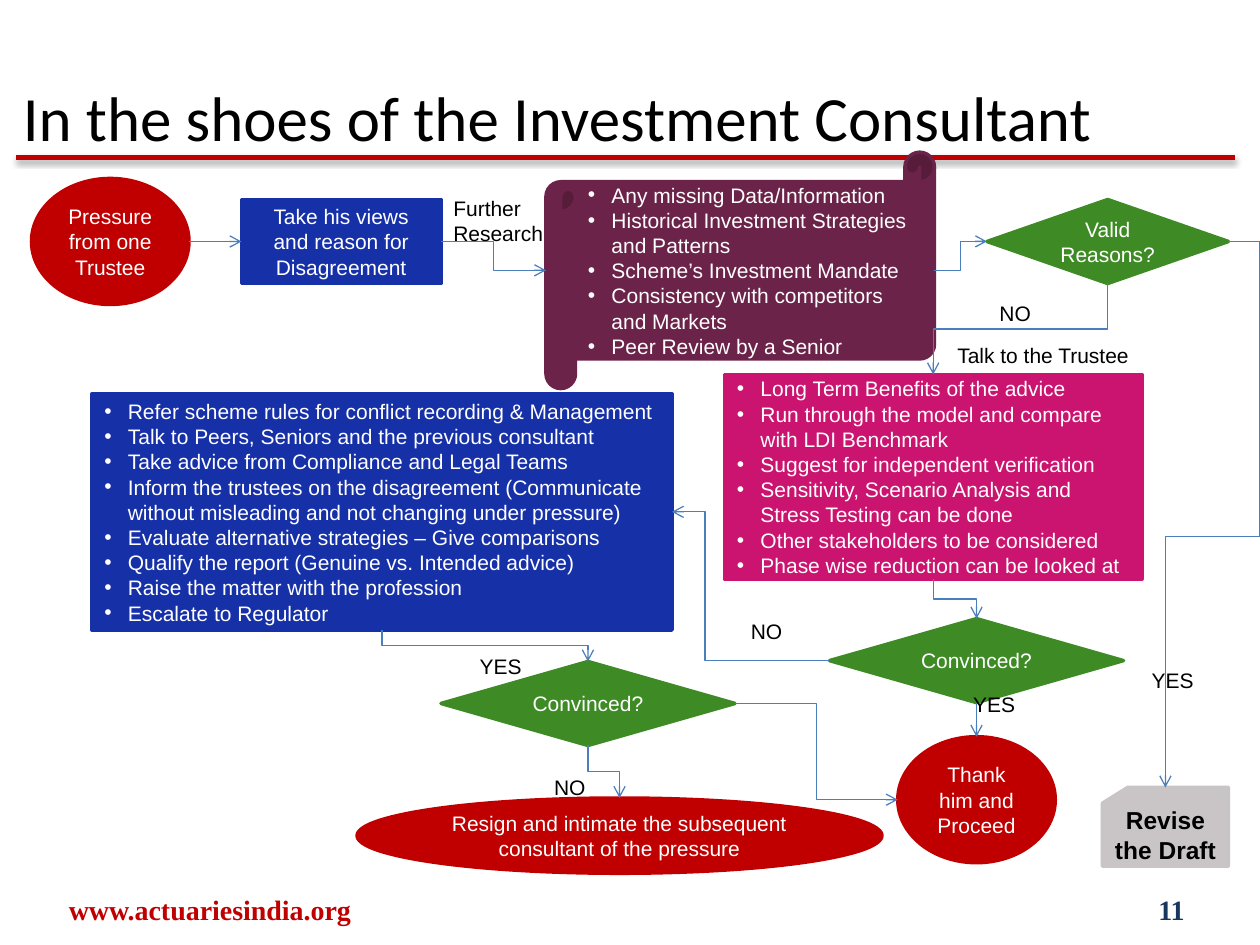
from lxml import etree
from pptx import Presentation
from pptx.dml.color import RGBColor
from pptx.enum.shapes import MSO_CONNECTOR, MSO_SHAPE
from pptx.enum.text import MSO_ANCHOR, MSO_AUTO_SIZE, PP_ALIGN
from pptx.oxml.ns import qn
from pptx.util import Pt

STRAIGHT, ELBOW = MSO_CONNECTOR.STRAIGHT, MSO_CONNECTOR.ELBOW
ELLIPSE, RECTANGLE = MSO_SHAPE.OVAL, MSO_SHAPE.RECTANGLE
SCROLL, CARD = MSO_SHAPE.HORIZONTAL_SCROLL, MSO_SHAPE.FLOWCHART_CARD
PROCESS, DECISION = MSO_SHAPE.FLOWCHART_PROCESS, MSO_SHAPE.FLOWCHART_DECISION
LEFT, CENTER, RIGHT = PP_ALIGN.LEFT, PP_ALIGN.CENTER, PP_ALIGN.RIGHT
MIDDLE, TOP = MSO_ANCHOR.MIDDLE, MSO_ANCHOR.TOP
GROW = MSO_AUTO_SIZE.SHAPE_TO_FIT_TEXT

RED, BLUE, GREEN = "C00000", "1630A7", "3E8B26"
PLUM, PINK, GREY = "6C2349", "CA1470", "C9C4C6"
BLACK, WHITE, NAVY, LINK = "000000", "FFFFFF", "17375E", "4B7EBC"

# Fraction of width and height at which each side's midpoint lies
SIDES = {"left": (0, 0.5), "right": (1, 0.5), "top": (0.5, 0), "bottom": (0.5, 1)}


def color(hex_code):
    return RGBColor.from_string(hex_code)


def side_point(node, side):
    across, down = SIDES[side]
    return (node.left.pt + across * node.width.pt,
            node.top.pt + down * node.height.pt)


class FlowSlide:
    """Holds the text style and the current slide."""
    font, size, indent = "Arial", 12, 13.5

    def __init__(self, slide):
        self.slide = slide

    def add_lines(self, frame, lines, ink, align=LEFT, font=None, size=None,
                  bold=False, bullets=False):
        for index, line in enumerate(lines):
            paragraph = frame.add_paragraph() if index else frame.paragraphs[0]
            paragraph.alignment = align
            if bullets:
                properties = paragraph._p.get_or_add_pPr()
                properties.set("marL", str(Pt(self.indent)))
                properties.set("indent", str(-Pt(self.indent)))
                etree.SubElement(properties, qn("a:buFont"), typeface="Arial")
                etree.SubElement(properties, qn("a:buChar"), char="•")
            run = paragraph.add_run()
            run.text = line
            run.font.name = font or self.font
            run.font.size = Pt(size or self.size)
            run.font.bold = bold
            run.font.color.rgb = color(ink)

    def text(self, box, lines, ink=BLACK, wrap=True, anchor=MIDDLE, **style):
        frame = self.slide.shapes.add_textbox(*map(Pt, box)).text_frame
        frame.word_wrap = wrap
        frame.vertical_anchor = anchor
        self.add_lines(frame, lines, ink, **style)
        return frame

    def label(self, left, top, width, *lines):
        height = 7.2 + 14.4 * len(lines)
        frame = self.text((left, top, width, height), lines, wrap=False, anchor=TOP)
        frame.auto_size = GROW

    def node(self, kind, box, fill, lines, ink=WHITE, align=CENTER, **style):
        shape = self.slide.shapes.add_shape(kind, *map(Pt, box))
        shape.shadow.inherit = False
        shape.fill.solid()
        shape.fill.fore_color.rgb = color(fill)
        shape.line.color.rgb = color(fill)
        shape.line.width = Pt(2)
        shape.text_frame.word_wrap = True
        shape.text_frame.vertical_anchor = MIDDLE
        self.add_lines(shape.text_frame, lines, ink, align, **style)
        return shape

    def listing(self, kind, box, fill, lines):
        return self.node(kind, box, fill, lines, align=LEFT, bullets=True)

    def line(self, kind, start, end, ink, width):
        """Return the connector and its effect list."""
        connector = self.slide.shapes.add_connector(kind, *map(Pt, start + end))
        connector.line.color.rgb = color(ink)
        connector.line.width = Pt(width)
        effects = etree.SubElement(connector._element.spPr, qn("a:effectLst"))
        return connector, effects

    def arrow(self, source, source_side, target, target_side, bends=()):
        start = side_point(source, source_side)
        end = side_point(target, target_side)
        (x1, y1), (x2, y2) = start, end
        straight = x1 == x2 or y1 == y2
        rotation = 0
        if source_side == "bottom" and not straight:
            # A path that leaves downwards is a sideways one, turned about its centre
            half_w, half_h = (y2 - y1) / 2, abs(x2 - x1) / 2
            mid_x, mid_y = (x1 + x2) / 2, (y1 + y2) / 2
            flip = 1 if x2 > x1 else -1
            rotation = 270 if x2 > x1 else 90
            start = (mid_x + flip * half_w, mid_y - half_h)
            end = (mid_x - flip * half_w, mid_y + half_h)
        connector, _ = self.line(STRAIGHT if straight else ELBOW, start, end, LINK, 0.75)
        properties = connector._element.spPr
        if rotation:
            properties.find(qn("a:xfrm")).set("rot", str(rotation * 60000))
        if bends:
            geometry = properties.find(qn("a:prstGeom"))
            geometry.set("prst", f"bentConnector{len(bends) + 2}")
            guides = geometry.find(qn("a:avLst"))
            for number, share in enumerate(bends, 1):
                etree.SubElement(guides, qn("a:gd"), name=f"adj{number}",
                                 fmla=f"val {round(share * 100000)}")
        etree.SubElement(properties.find(qn("a:ln")), qn("a:tailEnd"), type="arrow")


def main():
    deck = Presentation()
    deck.slide_width, deck.slide_height = Pt(720), Pt(540)
    flow = FlowSlide(deck.slides.add_slide(deck.slide_layouts[6]))

    # Title, shadowed rule and footer
    _, effects = flow.line(STRAIGHT, (9.4, 90), (705.6, 90), RED, 3)
    shadow = etree.SubElement(effects, qn("a:outerShdw"), blurRad=str(Pt(3.1)),
                              dist=str(Pt(1.6)), dir="5400000", rotWithShape="0")
    shade = etree.SubElement(shadow, qn("a:srgbClr"), val=BLACK)
    etree.SubElement(shade, qn("a:alpha"), val="38000")
    flow.text((6, 21.6, 648, 90), ["In the shoes of the Investment Consultant"],
              font="Calibri", size=36)
    footer = {"font": "Times New Roman", "size": 16, "bold": True}
    flow.text((6, 505.5, 228, 28.8), ["www.actuariesindia.org"], RED, align=CENTER, **footer)
    flow.text((516, 505.5, 168, 28.8), ["11"], NAVY, align=RIGHT, **footer)

    # Steps
    pressure = flow.node(ELLIPSE, (18, 102, 90, 72), RED, ["Pressure from one Trustee"])
    views = flow.node(RECTANGLE, (138, 114, 114, 48), BLUE,
                      ["Take his views and reason for Disagreement"])
    research = flow.listing(SCROLL, (312, 87, 222, 135), PLUM, [
        "Any missing Data/Information",
        "Historical Investment Strategies and Patterns",
        "Scheme’s Investment Mandate",
        "Consistency with competitors and Markets",
        "Peer Review by a Senior",
    ])
    valid = flow.node(DECISION, (564, 114, 138, 48), GREEN, ["Valid Reasons?"])
    revise = flow.node(CARD, (630, 450, 72, 45), GREY, ["Revise the Draft"],
                       BLACK, size=14, bold=True)
    talk = flow.listing(PROCESS, (414, 214, 238.5, 117), PINK, [
        "Long Term Benefits of the advice",
        "Run through the model and compare with LDI Benchmark",
        "Suggest for independent verification",
        "Sensitivity, Scenario Analysis and Stress Testing can be done",
        "Other stakeholders to be considered",
        "Phase wise reduction can be looked at",
    ])
    talk_convinced = flow.node(DECISION, (474, 353.5, 168, 48), GREEN, ["Convinced?"])
    thank = flow.node(ELLIPSE, (513, 421, 90, 72), RED, ["Thank him and Proceed"])
    escalate = flow.listing(PROCESS, (52.5, 225, 331.5, 135), BLUE, [
        "Refer scheme rules for conflict recording & Management",
        "Talk to Peers, Seniors and the previous consultant",
        "Take advice from Compliance and Legal Teams",
        "Inform the trustees on the disagreement (Communicate without misleading "
        "and not changing under pressure)",
        "Evaluate alternative strategies – Give comparisons",
        "Qualify the report (Genuine vs. Intended advice)",
        "Raise the matter with the profession",
        "Escalate to Regulator",
    ])
    escalate_convinced = flow.node(DECISION, (252, 378, 168, 48), GREEN, ["Convinced?"])
    resign = flow.node(ELLIPSE, (204, 456, 300, 43), RED,
                       ["Resign and intimate the subsequent consultant of the pressure"])

    # Arrows between the steps
    flow.arrow(pressure, "right", views, "left")
    flow.arrow(views, "right", research, "left")
    flow.arrow(research, "right", valid, "left")
    flow.arrow(valid, "right", revise, "top", bends=(-0.5, 0.54))
    flow.arrow(valid, "bottom", talk, "top")
    flow.arrow(talk, "bottom", talk_convinced, "top")
    flow.arrow(talk_convinced, "bottom", thank, "top")
    flow.arrow(talk_convinced, "left", escalate, "right", bends=(0.79,))
    flow.arrow(escalate, "bottom", escalate_convinced, "top")
    flow.arrow(escalate_convinced, "right", thank, "left")
    flow.arrow(escalate_convinced, "bottom", resign, "top")

    # Arrow labels
    flow.label(252, 108, 66, "Further", "Research")
    flow.label(540, 192, 114, "Talk to the Trustee")
    for left, top in ((651, 378), (549, 391.5), (267, 370)):
        flow.label(left, top, 38.8, "YES")
    for left, top in ((564, 168), (422, 350), (309.5, 439)):
        flow.label(left, top, 32.4, "NO")

    deck.save("out.pptx")


if __name__ == "__main__":
    main()
